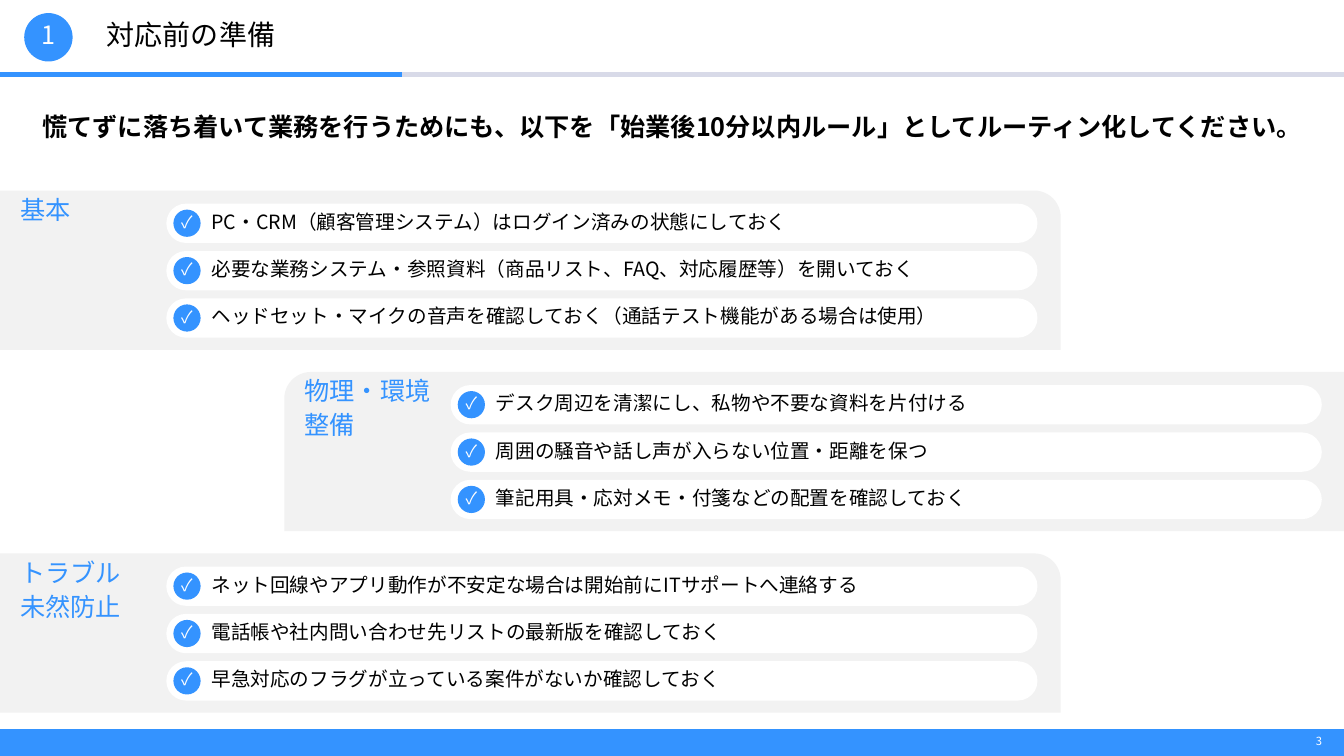
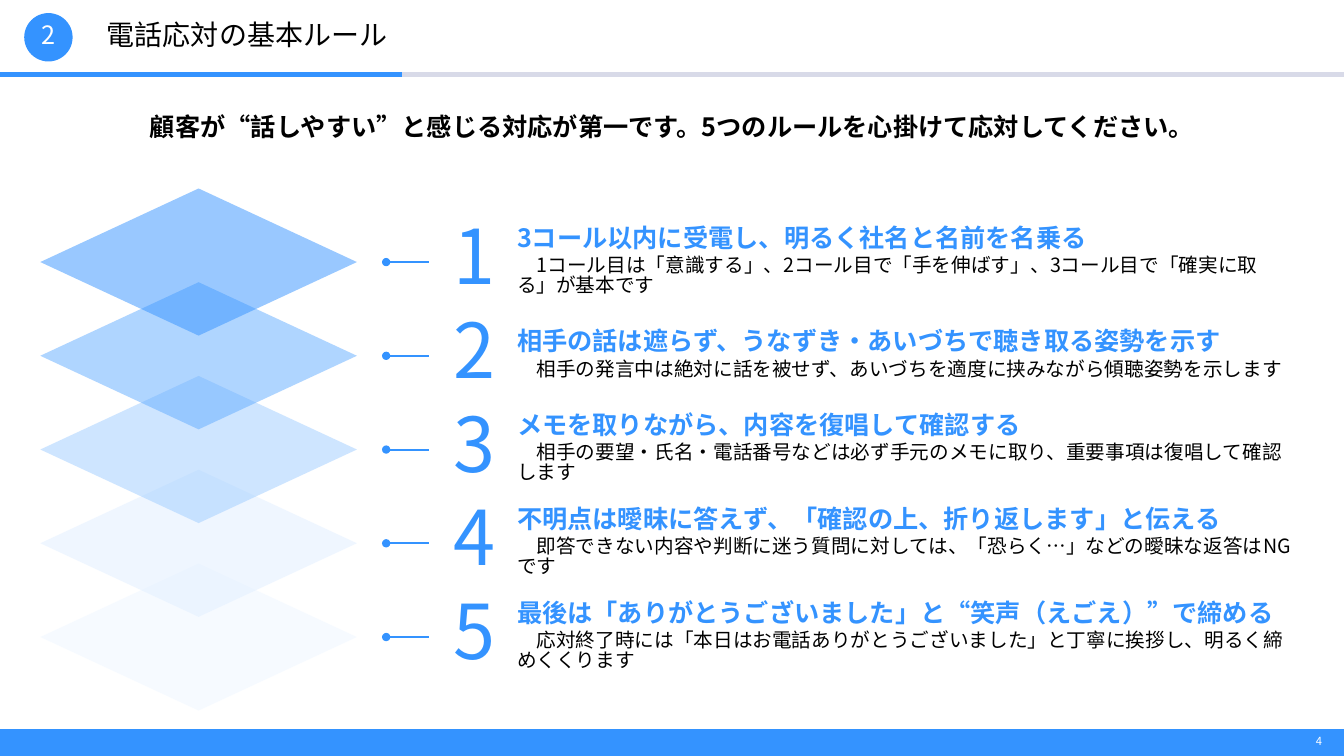
from lxml import etree
from pptx import Presentation
from pptx.dml.color import RGBColor
from pptx.enum.shapes import MSO_CONNECTOR, MSO_SHAPE
from pptx.enum.text import MSO_ANCHOR, MSO_AUTO_SIZE, PP_ALIGN
from pptx.oxml.ns import qn
from pptx.util import Inches, Pt

STRAIGHT = MSO_CONNECTOR.STRAIGHT
ELLIPSE = MSO_SHAPE.OVAL
PILL = MSO_SHAPE.ROUNDED_RECTANGLE
CARD = MSO_SHAPE.ROUND_1_RECTANGLE
DIAMOND = MSO_SHAPE.DIAMOND
TOP, MIDDLE = MSO_ANCHOR.TOP, MSO_ANCHOR.MIDDLE
LEFT, CENTER, RIGHT = PP_ALIGN.LEFT, PP_ALIGN.CENTER, PP_ALIGN.RIGHT
NO_FIT = MSO_AUTO_SIZE.NONE

FONT = "Noto Sans CJK JP"
LINE_SPACING = 0.85
SLIDE_W, SLIDE_H = 13.33, 7.5
DEFAULT_INSETS = (0.1, 0.05, 0.1, 0.05)
BADGE_INSETS = (0.08, 0.08, 0.08, 0.08)
COLORS = {
    "accent": "3493FF",
    "rule": "D8DAE8",
    "card": "F2F2F2",
    "white": "FFFFFF",
    "text": "000000",
}
LAYER_COLORS = ["3493FF", "61ACFF", "9FCDFF", "E1EFFF", "EFF7FF"]

CHECKLISTS = [
    (["基本"], 0, [
        "PC・CRM（顧客管理システム）はログイン済みの状態にしておく",
        "必要な業務システム・参照資料（商品リスト、FAQ、対応履歴等）を開いておく",
        "ヘッドセット・マイクの音声を確認しておく（通話テスト機能がある場合は使用）",
    ]),
    (["物理・環境", "整備"], 2.82, [
        "デスク周辺を清潔にし、私物や不要な資料を片付ける",
        "周囲の騒音や話し声が入らない位置・距離を保つ",
        "筆記用具・応対メモ・付箋などの配置を確認しておく",
    ]),
    (["トラブル", "未然防止"], 0, [
        "ネット回線やアプリ動作が不安定な場合は開始前にITサポートへ連絡する",
        "電話帳や社内問い合わせ先リストの最新版を確認しておく",
        "早急対応のフラグが立っている案件がないか確認しておく",
    ]),
]

RULES = [
    ("3コール以内に受電し、明るく社名と名前を名乗る",
     "1コール目は「意識する」、2コール目で「手を伸ばす」、3コール目で「確実に取る」が基本です"),
    ("相手の話は遮らず、うなずき・あいづちで聴き取る姿勢を示す",
     "相手の発言中は絶対に話を被せず、あいづちを適度に挟みながら傾聴姿勢を示します"),
    ("メモを取りながら、内容を復唱して確認する",
     "相手の要望・氏名・電話番号などは必ず手元のメモに取り、重要事項は復唱して確認します"),
    ("不明点は曖昧に答えず、「確認の上、折り返します」と伝える",
     "即答できない内容や判断に迷う質問に対しては、「恐らく…」などの曖昧な返答はNGです"),
    ("最後は「ありがとうございました」と“笑声（えごえ）”で締める",
     "応対終了時には「本日はお電話ありがとうございました」と丁寧に挨拶し、明るく締めくくります"),
]


def rgb(value):
    return RGBColor.from_string(value)


def set_frame(shape, anchor=MIDDLE, insets=DEFAULT_INSETS, wrap=True):
    frame = shape.text_frame
    frame.auto_size = NO_FIT
    frame.word_wrap = wrap
    frame.vertical_anchor = anchor
    frame.margin_left, frame.margin_top, frame.margin_right, frame.margin_bottom = map(Inches, insets)
    return frame


def write(frame, text, size, color="text", bold=False, align=LEFT, before=0, indent=0):
    paragraph = frame.paragraphs[0]
    if paragraph.runs:
        paragraph = frame.add_paragraph()
    paragraph.alignment = align
    paragraph.line_spacing = LINE_SPACING
    paragraph.space_before = Pt(before)
    properties = paragraph._p.get_or_add_pPr()
    properties.set("marL", "0")
    properties.set("indent", str(Pt(indent)))
    etree.SubElement(properties, qn("a:buNone"))
    run = paragraph.add_run()
    run.text = text
    run.font.size = Pt(size)
    run.font.bold = bold
    run.font.color.rgb = rgb(COLORS[color])
    run.font.name = FONT
    etree.SubElement(run._r.get_or_add_rPr(), qn("a:ea"), typeface=FONT)


def place(shape, box):
    shape.left, shape.top, shape.width, shape.height = map(Inches, box)


def add_box(slide, box, **frame_options):
    return set_frame(slide.shapes.add_textbox(*map(Inches, box)), **frame_options)


def add_block(slide, kind, box, fill, alpha=None):
    block = slide.shapes.add_shape(kind, *map(Inches, box))
    block.shadow.inherit = False
    block.fill.solid()
    block.fill.fore_color.rgb = rgb(fill)
    block.line.fill.background()
    if alpha is not None:
        tint = block._element.spPr.find(qn("a:solidFill"))[0]
        etree.SubElement(tint, qn("a:alpha"), val=str(alpha * 1000))
    return block


def add_badge(slide, x, y, diameter, text, size):
    badge = add_block(slide, ELLIPSE, (x, y, diameter, diameter), COLORS["accent"])
    frame = set_frame(badge, insets=BADGE_INSETS, wrap=False)
    write(frame, text, size, "white", align=CENTER)


def add_rule(slide, start, end, y, color, width, dot=False):
    rule = slide.shapes.add_connector(STRAIGHT, Inches(start), Inches(y), Inches(end), Inches(y))
    rule.line.color.rgb = rgb(COLORS[color])
    rule.line.width = Pt(width)
    properties = rule._element.spPr
    if dot:
        etree.SubElement(properties.find(qn("a:ln")), qn("a:tailEnd"), type="oval")
    etree.SubElement(properties, qn("a:effectLst"))


def add_section_slide(prs, section, page, title, lead):
    slide = prs.slides.add_slide(prs.slide_layouts[1])
    heading, message = slide.placeholders
    place(heading, (0.4, 0.16, 12.53, 0.42))
    write(set_frame(heading, insets=(0.66, 0.05, 0.1, 0.05)), title, 20, before=6)
    place(message, (0, 1.02, SLIDE_W, 0.51))
    write(set_frame(message), lead, 18, bold=True, align=CENTER, before=6)
    add_rule(slide, 0, SLIDE_W, 0.74, "rule", 3)
    add_rule(slide, 0, 3.99, 0.74, "accent", 3)
    add_rule(slide, 0, SLIDE_W, 7.37, "accent", 20)
    write(add_box(slide, (12.72, 7.24, 0.49, 0.25)), str(page), 8, "white", align=RIGHT)
    add_badge(slide, 0.24, 0.13, 0.48, str(section), 18)
    return slide


def add_checklist(slide, x, y, label, checks):
    box = (x, y, 10.52, 1.58)
    card = add_block(slide, CARD, box, COLORS["card"])
    if x > 0:
        card._element.spPr.find(qn("a:xfrm")).set("flipH", "1")
    frame = add_box(slide, box, anchor=TOP, insets=(0.2, 0.08, 0.1, 0.05))
    for line in label:
        write(frame, line, 18, "accent", before=6)
    for row, check in enumerate(checks):
        row_y = y + 0.13 + row * 0.47
        pill = add_block(slide, PILL, (x + 1.65, row_y, 8.64, 0.39), COLORS["white"])
        pill.adjustments[0] = 0.5
        write(set_frame(pill, insets=(0.39, 0.05, 0.1, 0.05)), check, 14, before=6)
        add_badge(slide, x + 1.72, row_y + 0.06, 0.27, "✓", 12)


def add_layers(slide, tops):
    for top, color in reversed(list(zip(tops, LAYER_COLORS))):
        add_block(slide, DIAMOND, (0.4, top, 3.14, 1.46), color, alpha=50)


def add_phone_rule(slide, top, number, headline, detail):
    number_box = add_box(slide, (4.21, top + 0.31, 1, 0.83))
    write(number_box, str(number), 54, "accent", align=CENTER, before=3)
    explanation = add_box(slide, (5.03, top + 0.31, 7.91, 0.83))
    write(explanation, headline, 18, "accent", bold=True, before=3)
    write(explanation, detail, 14, before=3, indent=14)
    add_rule(slide, 4.25, 3.83, top + 0.73, "accent", 1.5, dot=True)


def main():
    prs = Presentation()
    prs.slide_width, prs.slide_height = Inches(SLIDE_W), Inches(SLIDE_H)

    preparation = add_section_slide(
        prs, 1, 3, "対応前の準備",
        "慌てずに落ち着いて業務を行うためにも、以下を「始業後10分以内ルール」としてルーティン化してください。")
    for index, (label, x, checks) in enumerate(CHECKLISTS):
        add_checklist(preparation, x, 1.89 + index * 1.8, label, checks)

    phone_rules = add_section_slide(
        prs, 2, 4, "電話応対の基本ルール",
        "顧客が“話しやすい”と感じる対応が第一です。5つのルールを心掛けて応対してください。")
    tops = [1.87 + index * 0.93 for index in range(len(RULES))]
    add_layers(phone_rules, tops)
    for number, (top, (headline, detail)) in enumerate(zip(tops, RULES), 1):
        add_phone_rule(phone_rules, top, number, headline, detail)

    prs.save("out.pptx")


if __name__ == "__main__":
    main()
